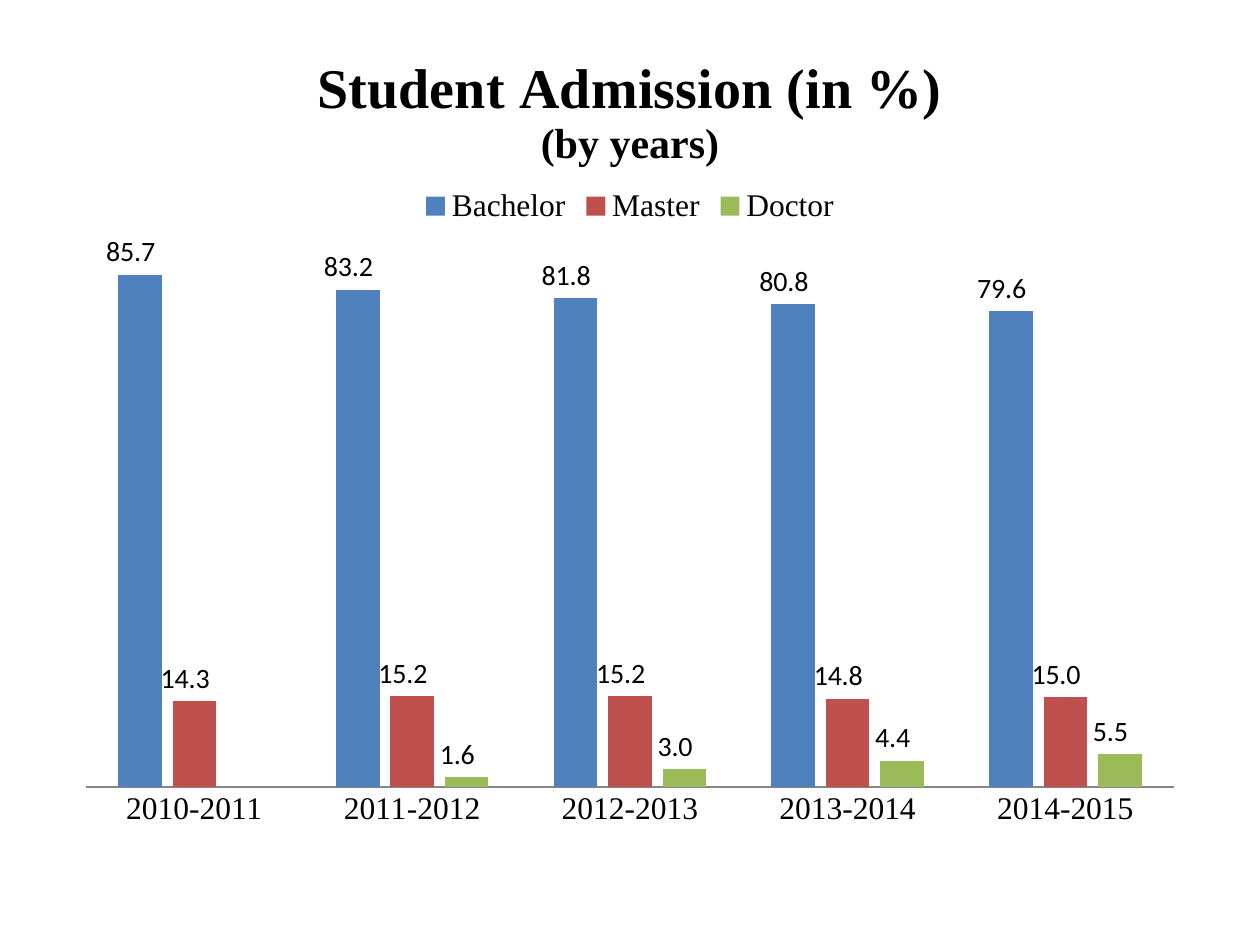
from lxml.etree import SubElement
from pptx import Presentation
from pptx.chart.data import CategoryChartData
from pptx.dml.color import RGBColor
from pptx.enum.chart import XL_CHART_TYPE, XL_LABEL_POSITION, XL_LEGEND_POSITION, XL_TICK_MARK
from pptx.oxml.ns import qn
from pptx.util import Inches, Pt

COLORS = {
    "text": "000000",
    "axis": "868686",
    "Bachelor": "4F81BD",
    "Master": "C0504D",
    "Doctor": "9BBB59",
}
SERIF, SANS = "Times New Roman", "Calibri"
NUMBER_FORMAT = r"_-* #,##0.0_р_._-;\-* #,##0.0_р_._-"

YEARS = [f"{year}-{year + 1}" for year in range(2010, 2015)]
ADMISSION = {
    "Bachelor": [85.7, 83.2, 81.8, 80.8, 79.6],
    "Master": [14.3, 15.2, 15.2, 14.8, 15.0],
    "Doctor": [None, 1.6, 3.0, 4.4, 5.5],
}


def color(name):
    return RGBColor.from_string(COLORS[name])


def format_font(font, size, name=SERIF, bold=False):
    font.name, font.size, font.bold = name, Pt(size), bold
    font.color.rgb = color("text")


def add_text(paragraph, text, **font_format):
    run = paragraph.add_run()
    run.text = text
    format_font(run.font, **font_format)


def add_chart(slide):
    data = CategoryChartData(number_format=NUMBER_FORMAT)
    data.categories = YEARS
    for name, values in ADMISSION.items():
        data.add_series(name, values)
    chart = slide.shapes.add_chart(
        XL_CHART_TYPE.COLUMN_CLUSTERED,
        Inches(0.5), Inches(0.23), Inches(9), Inches(6.47), data,
    ).chart
    format_font(chart.font, 10, SANS)
    return chart


def format_title(chart):
    frame = chart.chart_title.text_frame
    chart.chart_title.include_in_layout = False
    add_text(frame.paragraphs[0], "Student Admission (in %)", size=32, bold=True)
    add_text(frame.add_paragraph(), "(by years)", size=24, bold=True)


def format_legend(chart):
    chart.has_legend = True
    chart.legend.position = XL_LEGEND_POSITION.TOP
    chart.legend.include_in_layout = False
    format_font(chart.legend.font, 18)


def format_axes(chart):
    category_axis = chart.category_axis
    category_axis.major_tick_mark = XL_TICK_MARK.NONE
    category_axis.format.line.color.rgb = color("axis")
    category_axis.format.line.width = Pt(0.75)
    format_font(category_axis.tick_labels.font, 18)
    value_axis = chart.value_axis
    value_axis.minimum_scale, value_axis.maximum_scale = 0, 90
    value_axis.has_major_gridlines = False
    value_axis.visible = False


def format_columns(chart):
    plot = chart.plots[0]
    plot.gap_width, plot.overlap = 150, -25
    plot.vary_by_categories = False
    for series in plot.series:
        series.format.fill.solid()
        series.format.fill.fore_color.rgb = color(series.name)
        labels = series.data_labels
        labels.show_value = True
        labels.position = XL_LABEL_POSITION.OUTSIDE_END
        labels.number_format = NUMBER_FORMAT
        labels.number_format_is_linked = False
        format_font(labels.font, 16, SANS)


def place_plot(chart, **fractions):
    """Fix the inner plot area, as fractions of the chart's size."""
    plot_area = chart.element.find(".//" + qn("c:plotArea"))
    layout = plot_area.find(qn("c:layout"))
    if layout is None:
        layout = SubElement(plot_area, qn("c:layout"))
        plot_area.insert(0, layout)
    manual = SubElement(layout, qn("c:manualLayout"))
    settings = {"layoutTarget": "inner", "xMode": "edge", "yMode": "edge", **fractions}
    for tag, value in settings.items():
        SubElement(manual, qn(f"c:{tag}")).set("val", str(value))


def main():
    presentation = Presentation()
    presentation.slide_width, presentation.slide_height = Inches(10), Inches(7.5)
    # The heading belongs to the chart, so the slide uses the blank layout
    slide = presentation.slides.add_slide(presentation.slide_layouts[6])

    chart = add_chart(slide)
    format_title(chart)
    format_legend(chart)
    format_axes(chart)
    format_columns(chart)
    place_plot(chart, x=0.02, y=0.27, w=0.96, h=0.66)

    presentation.save("out.pptx")


if __name__ == "__main__":
    main()
